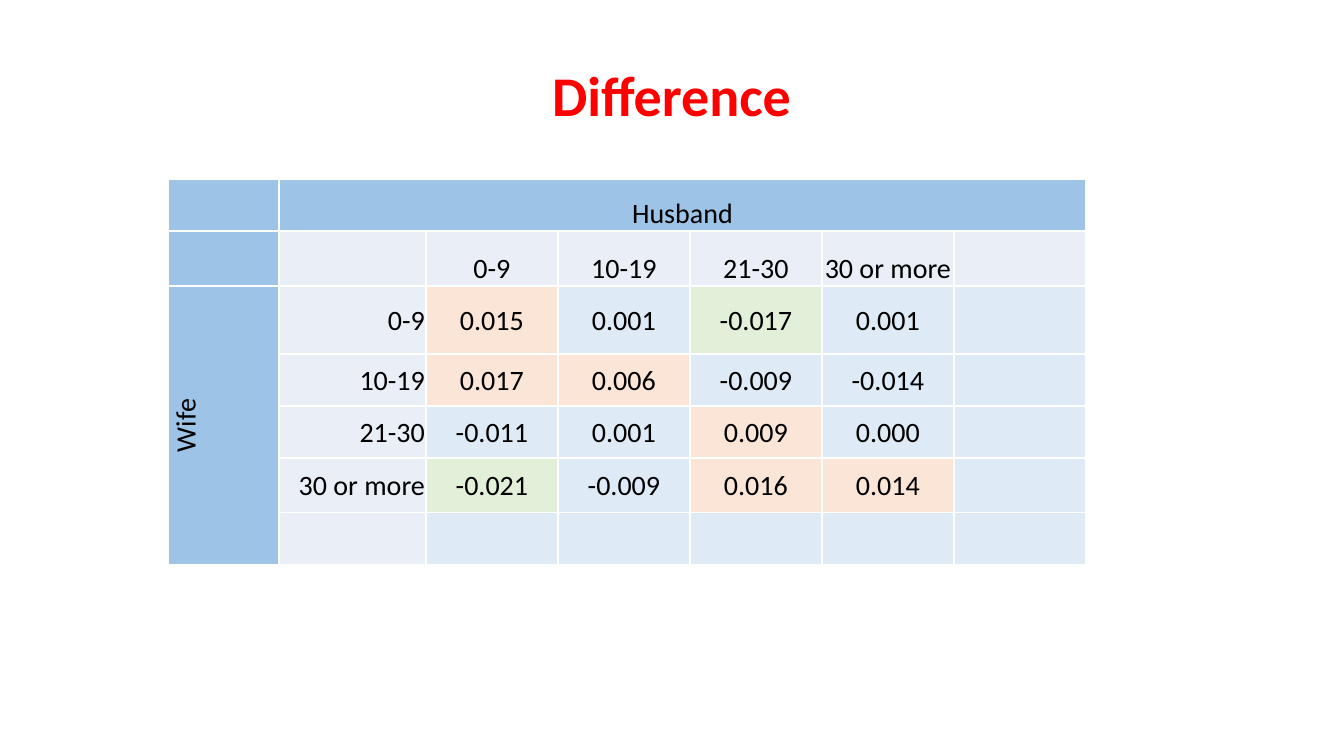
from lxml import etree
from pptx import Presentation
from pptx import util as u
from pptx.dml.color import RGBColor
from pptx.enum import text
from pptx.oxml import ns

PX = 914400 / 100.8
RED = RGBColor(0xFF, 0x00, 0x00)
BLACK = RGBColor(0x00, 0x00, 0x00)
HEADER_BLUE = RGBColor(0x9D, 0xC3, 0xE6)
LABEL_GREY = RGBColor(0xEA, 0xEF, 0xF7)
BODY_BLUE = RGBColor(0xDE, 0xEB, 0xF7)
HIGH_ORANGE = RGBColor(0xFB, 0xE5, 0xD6)
LOW_GREEN = RGBColor(0xE2, 0xF0, 0xD9)
WHITE = RGBColor(0xFF, 0xFF, 0xFF)
HIGH, LOW = 0.006, -0.017


def px(n):
    return u.Emu(round(n * PX))


def add_borders(cell):
    tcPr = cell._tc.get_or_add_tcPr()
    for side in ("a:lnL", "a:lnR", "a:lnT", "a:lnB"):
        ln = etree.SubElement(tcPr, ns.qn(side), w=str(u.Pt(1)))
        fill = etree.SubElement(ln, ns.qn("a:solidFill"))
        etree.SubElement(fill, ns.qn("a:srgbClr"), val=str(WHITE))


prs = Presentation()
prs.slide_width, prs.slide_height = px(1344), px(756)
s = prs.slides.add_slide(prs.slide_layouts[5])

title = s.shapes.title
title.left, title.top, title.width, title.height = px(92), px(55), px(1159), px(87)
tf = title.text_frame
tf.text = "Difference"
tf.vertical_anchor = text.MSO_ANCHOR.MIDDLE
p = tf.paragraphs[0]
p.alignment = text.PP_ALIGN.CENTER
p.line_spacing = 0.9
p.font.name, p.font.size, p.font.bold = "Calibri", u.Pt(40), True
p.font.color.rgb = RED

rows = [
    ["", "Husband", "", "", "", "", ""],
    ["", "", "0-9", "10-19", "21-30", "30 or more", ""],
    ["Wife", "0-9", "0.015", "0.001", "-0.017", "0.001", ""],
    ["", "10-19", "0.017", "0.006", "-0.009", "-0.014", ""],
    ["", "21-30", "-0.011", "0.001", "0.009", "0.000", ""],
    ["", "30 or more", "-0.021", "-0.009", "0.016", "0.014", ""],
    ["", "", "", "", "", "", ""],
]
col_widths = [111, 147] + [132] * 5
row_heights = [52, 55, 68, 52, 52, 55, 52]

frame = s.shapes.add_table(len(rows), len(col_widths), px(168), px(179),
                           px(sum(col_widths)), px(sum(row_heights)))
table = frame.table
for col, width in zip(table.columns, col_widths):
    col.width = px(width)
for row, height in zip(table.rows, row_heights):
    row.height = px(height)

for i, row in enumerate(rows):
    for j, value in enumerate(row):
        cell = table.cell(i, j)
        add_borders(cell)
        if i == 0 or j == 0:
            color = HEADER_BLUE
        elif i == 1 or j == 1:
            color = LABEL_GREY
        elif value and float(value) >= HIGH:
            color = HIGH_ORANGE
        elif value and float(value) <= LOW:
            color = LOW_GREEN
        else:
            color = BODY_BLUE
        cell.fill.solid()
        cell.fill.fore_color.rgb = color
        if not value:
            continue
        cell.text = value
        cell.margin_left = cell.margin_right = cell.margin_top = px(1)
        cell.margin_bottom = 0
        header = i < 2 or j == 0
        cell.vertical_anchor = text.MSO_ANCHOR.BOTTOM if header else text.MSO_ANCHOR.MIDDLE
        p = cell.text_frame.paragraphs[0]
        p.alignment = text.PP_ALIGN.RIGHT if j == 1 and i > 1 else text.PP_ALIGN.CENTER
        p.font.name, p.font.size, p.font.bold = "Calibri", u.Pt(20), False
        p.font.color.rgb = BLACK

table.cell(0, 1).merge(table.cell(0, 6))
wife = table.cell(2, 0)
wife.merge(table.cell(6, 0))
wife._tc.get_or_add_tcPr().set("vert", "vert270")

prs.save("out.pptx")
